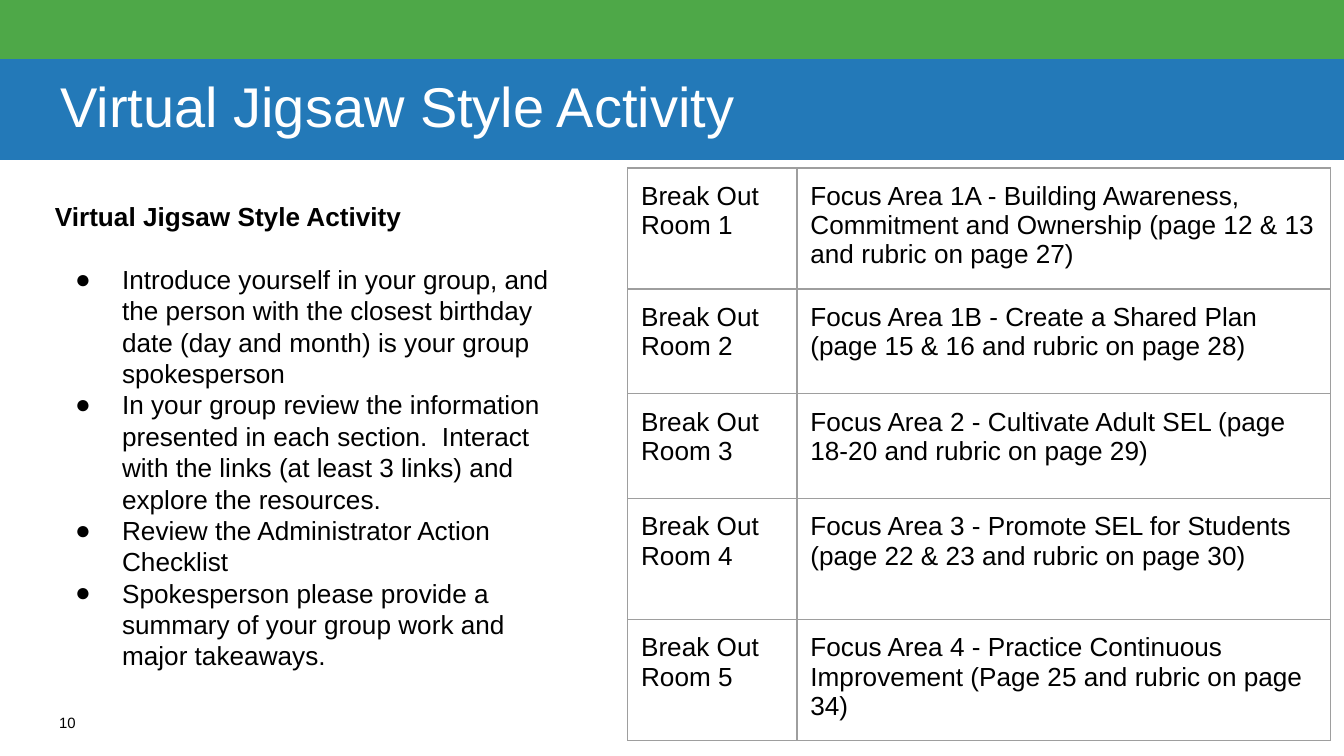
from dataclasses import dataclass

from lxml.etree import SubElement
from pptx import Presentation
from pptx.dml.color import RGBColor
from pptx.enum.shapes import MSO_SHAPE
from pptx.enum.text import MSO_ANCHOR, PP_ALIGN
from pptx.oxml.ns import qn
from pptx.util import Inches, Pt

BLACK, WHITE, GREEN, BLUE, GRAY = "000000", "FFFFFF", "4EA848", "2379B8", "9E9E9E"
TITLE = "Virtual Jigsaw Style Activity"


@dataclass
class Band:
    top: float
    height: float
    color: str


@dataclass
class Room:
    number: int
    focus: str
    height: float


GREEN_BAND = Band(0, 0.44, GREEN)
TITLE_BAND = Band(0.44, 0.75, BLUE)

STEPS = [
    "Introduce yourself in your group, and the person with the closest birthday date (day and month) is your group spokesperson",
    "In your group review the information presented in each section.  Interact with the links (at least 3 links) and explore the resources.",
    "Review the Administrator Action Checklist",
    "Spokesperson please provide a summary of your group work and major takeaways.",
]

ROOMS = [
    Room(1, "Focus Area 1A - Building Awareness, Commitment and Ownership (page 12 & 13 and rubric on page 27)", 0.9),
    Room(2, "Focus Area 1B - Create a Shared Plan (page 15 & 16 and rubric on page 28)", 0.78),
    Room(3, "Focus Area 2 - Cultivate Adult SEL (page 18-20 and rubric on page 29)", 0.78),
    Room(4, "Focus Area 3 - Promote SEL for Students (page 22 & 23 and rubric on page 30)", 0.9),
    Room(5, "Focus Area 4 - Practice Continuous Improvement (Page 25 and rubric on page 34)", 0.9),
]


def rgb(color: str) -> RGBColor:
    return RGBColor.from_string(color)


def write(para, text: str, size: float, color: str = BLACK, bold: bool = False) -> None:
    para.text = text
    para.font.name = "Arial"
    para.font.size = Pt(size)
    para.font.bold = bold
    para.font.color.rgb = rgb(color)


def set_margins(target, side: float, end: float) -> None:
    target.margin_left = target.margin_right = Inches(side)
    target.margin_top = target.margin_bottom = Inches(end)


def add_band(page, band: Band):
    shape = page.shapes.add_shape(
        MSO_SHAPE.RECTANGLE, 0, Inches(band.top), Inches(10), Inches(band.height)
    )
    shape.shadow.inherit = False
    shape.fill.solid()
    shape.fill.fore_color.rgb = rgb(band.color)
    shape.line.fill.background()
    return shape


def add_title(page) -> None:
    frame = add_band(page, TITLE_BAND).text_frame
    frame.vertical_anchor = MSO_ANCHOR.MIDDLE
    set_margins(frame, 0.45, 0)
    para = frame.paragraphs[0]
    para.alignment = PP_ALIGN.LEFT
    para.line_spacing = 0.9
    write(para, TITLE, 30, WHITE)


def add_frame(page, left: float, top: float, width: float, height: float, margin: float):
    box = page.shapes.add_textbox(Inches(left), Inches(top), Inches(width), Inches(height))
    frame = box.text_frame
    frame.word_wrap = True
    set_margins(frame, margin, margin)
    return frame


def add_bullet(para) -> None:
    properties = para._p.get_or_add_pPr()
    properties.set("marL", str(Inches(0.5)))
    properties.set("indent", str(Inches(-0.35)))
    color = SubElement(properties, qn("a:buClr"))
    SubElement(color, qn("a:srgbClr"), val=BLACK)
    SubElement(properties, qn("a:buSzPts"), val="1400")
    SubElement(properties, qn("a:buFont"), typeface="Arial")
    SubElement(properties, qn("a:buChar"), char="●")


def add_steps(page) -> None:
    frame = add_frame(page, 0.31, 1.39, 3.99, 3.74, 0.1)
    heading = frame.paragraphs[0]
    heading.space_after = Pt(17)
    write(heading, TITLE, 14, bold=True)
    for step in STEPS:
        para = frame.add_paragraph()
        add_bullet(para)
        write(para, step, 14)


def style_cell(cell, text: str) -> None:
    set_margins(cell, 0.1, 0.1)
    write(cell.text_frame.paragraphs[0], text, 14)
    properties = cell._tc.get_or_add_tcPr()
    for side in ("lnL", "lnR", "lnT", "lnB"):
        line = SubElement(properties, qn(f"a:{side}"), w=str(Pt(0.75)))
        fill = SubElement(line, qn("a:solidFill"))
        SubElement(fill, qn("a:srgbClr"), val=GRAY)
    cell.fill.background()


def add_rooms(page) -> None:
    widths = [1.26, 3.97]
    height = sum(room.height for room in ROOMS)
    table = page.shapes.add_table(
        len(ROOMS), len(widths), Inches(4.67), Inches(1.25), Inches(sum(widths)), Inches(height)
    ).table
    table.first_row = table.horz_banding = False
    for column, width in zip(table.columns, widths):
        column.width = Inches(width)
    for row, room in zip(table.rows, ROOMS):
        row.height = Inches(room.height)
        for cell, text in zip(row.cells, (f"Break Out Room {room.number}", room.focus)):
            style_cell(cell, text)


def main() -> None:
    deck = Presentation()
    deck.slide_width, deck.slide_height = Inches(10), Inches(10 * 9 / 16)
    page = deck.slides.add_slide(deck.slide_layouts[6])
    add_band(page, GREEN_BAND)
    add_title(page)
    write(add_frame(page, 0.44, 5.31, 0.37, 0.2, 0).paragraphs[0], "10", 8)
    add_steps(page)
    add_rooms(page)
    deck.save("out.pptx")


if __name__ == "__main__":
    main()
